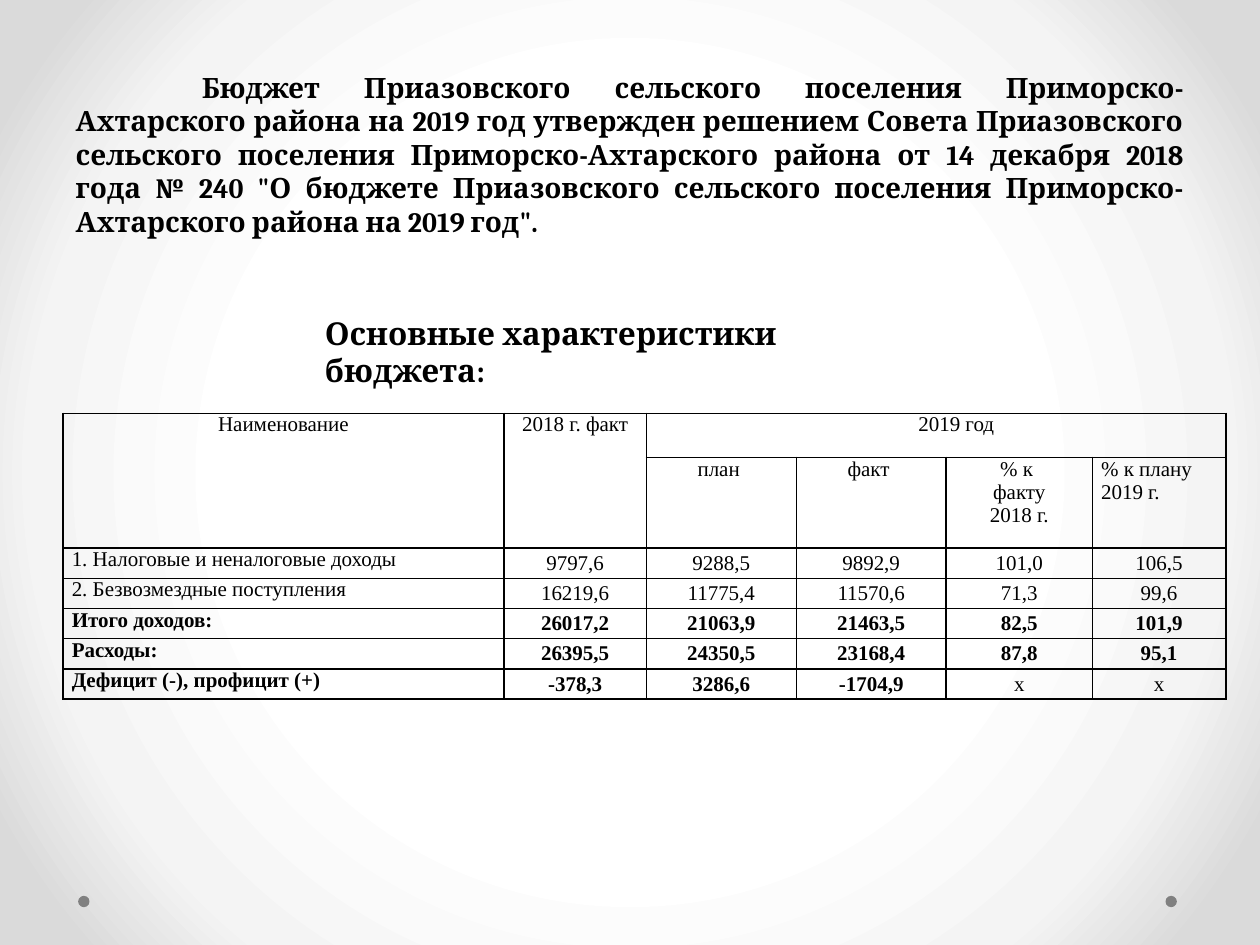
from dataclasses import dataclass

from pptx import Presentation
from pptx.dml.color import RGBColor
from pptx.enum.shapes import MSO_SHAPE
from pptx.enum.text import MSO_ANCHOR, PP_ALIGN
from pptx.oxml import parse_xml
from pptx.oxml.ns import nsdecls, qn
from pptx.util import Inches, Pt

LEFT, CENTER, JUSTIFY = PP_ALIGN.LEFT, PP_ALIGN.CENTER, PP_ALIGN.JUSTIFY
TOP, MIDDLE, BOTTOM = MSO_ANCHOR.TOP, MSO_ANCHOR.MIDDLE, MSO_ANCHOR.BOTTOM
OVAL = MSO_SHAPE.OVAL

COLORS = {"text": "000000", "line": "000000", "dot": "808080",
          "light": "FFFFFF", "pale": "F4F4F4", "edge": "DADADA"}
HEAD_FONT, BODY_FONT = "Cambria", "Times New Roman"

TITLE = ("\tБюджет Приазовского сельского поселения Приморско-Ахтарского района "
         "на 2019 год утвержден решением Совета Приазовского сельского поселения "
         "Приморско-Ахтарского района от 14 декабря 2018 года № 240 \"О бюджете "
         "Приазовского сельского поселения Приморско-Ахтарского района на 2019 год\".")
LEAD = "Основные характеристики бюджета:"


@dataclass
class Head:
    row: int
    col: int
    text: str
    rows: int = 1
    cols: int = 1
    align: PP_ALIGN = CENTER
    indent: float = 0


@dataclass
class Line:
    name: str
    values: list[str]
    bold: bool = False


HEADS = [
    Head(0, 0, "Наименование", rows=2),
    Head(0, 1, "2018 г. факт", rows=2),
    Head(0, 2, "2019 год", cols=4, indent=0.32),
    Head(1, 2, "план "),
    Head(1, 3, "факт "),
    Head(1, 4, "% к \nфакту\n2018 г."),
    Head(1, 5, "% к плану\n2019 г.", align=LEFT),
]
LINES = [
    Line("1. Налоговые и неналоговые доходы",
         ["9797,6", "9288,5", "9892,9", "101,0", "106,5"]),
    Line("2. Безвозмездные поступления",
         ["16219,6", "11775,4", "11570,6", "71,3", "99,6"]),
    Line("Итого доходов:",
         ["26017,2", "21063,9", "21463,5", "82,5", "101,9"], True),
    Line("Расходы:",
         ["26395,5", "24350,5", "23168,4", "87,8", "95,1"], True),
    Line("Дефицит (-), профицит (+)",
         ["-378,3", "3286,6", "-1704,9", "х", "х"], True),
]
WIDTHS = [3.5, 1.13, 1.19, 1.19, 1.16, 1.06]
HEIGHTS = [0.35, 0.72] + [0.24] * len(LINES)


def rgb(name: str) -> RGBColor:
    return RGBColor.from_string(COLORS[name])


def style(frame, font: str, size: float, bold: bool, align: PP_ALIGN) -> None:
    for para in frame.paragraphs:
        para.alignment = align
        for run in para.runs:
            run.font.name = font
            run.font.size = Pt(size)
            run.font.bold = bold
            run.font.color.rgb = rgb("text")


def set_prop(frame, name: str, inches: float) -> None:
    """Set a length on the first paragraph."""
    props = frame.paragraphs[0]._p.get_or_add_pPr()
    props.set(name, str(Inches(inches)))


def paint_back(slide) -> None:
    """Radial gradient, white in the middle."""
    slide.background.fill.solid()
    solid = next(slide.element.iter(qn("a:solidFill")))
    stops = "".join(
        f'<a:gs pos="{pos}000"><a:srgbClr val="{COLORS[name]}"/></a:gs>'
        for pos, name in [(50, "light"), (76, "pale"), (92, "edge")])
    grad = parse_xml(
        f'<a:gradFill {nsdecls("a")} rotWithShape="1"><a:gsLst>{stops}</a:gsLst>'
        '<a:path path="circle"><a:fillToRect l="50000" t="50000" r="50000" '
        'b="50000"/></a:path></a:gradFill>')
    solid.getparent().replace(solid, grad)


def add_dot(slide, left: float) -> None:
    dot = slide.shapes.add_shape(
        OVAL, Inches(left), Inches(7.11), Inches(0.09), Inches(0.09))
    dot.shadow.inherit = False
    dot.fill.solid()
    dot.fill.fore_color.rgb = rgb("dot")
    dot.line.fill.background()


def add_edges(cell) -> None:
    props = cell._tc.get_or_add_tcPr()
    for spot, side in enumerate("LRTB"):
        edge = parse_xml(
            f'<a:ln{side} {nsdecls("a")} w="{Pt(1)}"><a:solidFill>'
            f'<a:srgbClr val="{COLORS["line"]}"/></a:solidFill></a:ln{side}>')
        props.insert(spot, edge)


def fill_cell(cell, text: str, bold: bool = False, align: PP_ALIGN = CENTER,
              anchor: MSO_ANCHOR = TOP) -> None:
    cell.text_frame.text = text
    cell.vertical_anchor = anchor
    style(cell.text_frame, BODY_FONT, 12, bold, align)


def add_grid(slide) -> None:
    table = slide.shapes.add_table(
        len(HEIGHTS), len(WIDTHS), Inches(0.5), Inches(3.28),
        Inches(sum(WIDTHS)), Inches(sum(HEIGHTS))).table
    table.first_row = table.horz_banding = False
    for col, width in zip(table.columns, WIDTHS):
        col.width = Inches(width)
    for row, height in zip(table.rows, HEIGHTS):
        row.height = Inches(height)
    for cell in table.iter_cells():
        cell.margin_left = cell.margin_right = Inches(0.07)
        cell.margin_top = cell.margin_bottom = 0
        cell.fill.background()
        add_edges(cell)

    # Header cells
    for head in HEADS:
        cell = table.cell(head.row, head.col)
        if head.rows * head.cols > 1:
            cell.merge(table.cell(head.row + head.rows - 1,
                                  head.col + head.cols - 1))
        fill_cell(cell, head.text, align=head.align)
        if head.indent:
            set_prop(cell.text_frame, "marL", head.indent)

    # Budget lines
    for row, line in enumerate(LINES, 2):
        fill_cell(table.cell(row, 0), line.name, line.bold, LEFT)
        for col, value in enumerate(line.values, 1):
            fill_cell(table.cell(row, col), value,
                      line.bold and value != "х", CENTER, MIDDLE)


def main() -> None:
    deck = Presentation()
    deck.slide_width, deck.slide_height = Inches(10), Inches(7.5)
    slide = deck.slides.add_slide(deck.slide_layouts[5])
    paint_back(slide)
    for left in (9.25, 0.62):
        add_dot(slide, left)

    # Title, its first line set in by a one-inch tab
    title = slide.shapes.title
    title.left, title.top = Inches(0.5), Inches(0)
    title.width, title.height = Inches(9), Inches(1.94)
    title.text_frame.text = TITLE
    title.text_frame.vertical_anchor = BOTTOM
    style(title.text_frame, HEAD_FONT, 16, True, JUSTIFY)
    set_prop(title.text_frame, "defTabSz", 1)

    # Table heading
    lead = slide.shapes.add_textbox(
        Inches(2.48), Inches(2.44), Inches(4.89), Inches(0.4))
    lead.text_frame.word_wrap = True
    lead.text_frame.text = LEAD
    style(lead.text_frame, HEAD_FONT, 18, True, LEFT)

    add_grid(slide)
    deck.save("out.pptx")


if __name__ == "__main__":
    main()
